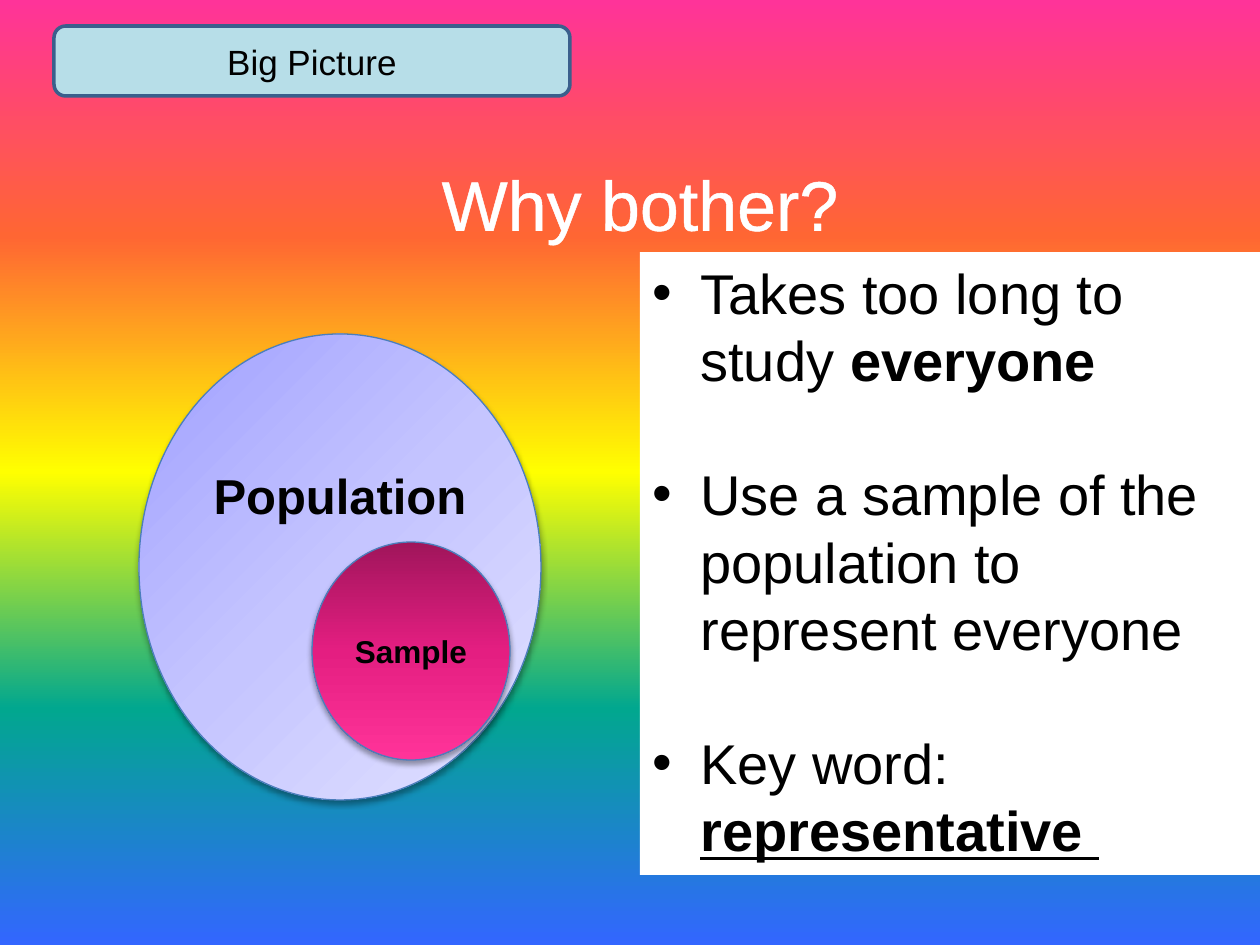
from lxml import etree
from pptx import Presentation
from pptx.dml.color import RGBColor
from pptx.enum.shapes import MSO_SHAPE
from pptx.enum.text import MSO_ANCHOR, PP_ALIGN
from pptx.oxml import parse_xml
from pptx.oxml.ns import nsdecls, qn
from pptx.util import Emu, Pt

ROUNDED, OVAL = MSO_SHAPE.ROUNDED_RECTANGLE, MSO_SHAPE.OVAL
MIDDLE, BOTTOM = MSO_ANCHOR.MIDDLE, MSO_ANCHOR.BOTTOM
CENTER = PP_ALIGN.CENTER
PX = 914400 / 126

THEME = {
    "font": "Arial",
    "ink": "000000",
    "paper": "FFFFFF",
    "tag_fill": "B7DEE8",
    "tag_line": "3A5F8C",
    "oval_line": "4B7EBC",
    "rainbow": ["FF3399", "FF6633", "FFFF00", "01A78F", "3366FF"],
    "lavender": ["A0A0FF", "C5C5FF", "E3E3FF"],
    "magenta": ["A0155B", "E41E81", "FF3399"],
    "tag_size": 20,
    "title_size": 40,
    "population_size": 28,
    "sample_size": 18,
    "reason_size": 32,
    "reason_pitch": 38.4,
}


def paint_gradient(fill, owner, colors, angle):
    fill.gradient()
    fill.gradient_angle = 360 - angle
    stops = owner.find(".//" + qn("a:gsLst"))
    for stop in list(stops):
        stops.remove(stop)
    for i, color in enumerate(colors):
        position = i * 100000 // (len(colors) - 1)
        stop = etree.SubElement(stops, qn("a:gs"), pos=str(position))
        etree.SubElement(stop, qn("a:srgbClr"), val=color)


def write(paragraph, text, size, color="ink", **formats):
    run = paragraph.add_run()
    run.text = text
    run.font.color.rgb = RGBColor.from_string(THEME[color])
    formats = {"name": THEME["font"], "size": Pt(THEME[size]), **formats}
    for key, value in formats.items():
        setattr(run.font, key, value)
    return run


prs = Presentation()
prs.slide_width, prs.slide_height = Emu(int(1260 * PX)), Emu(int(945 * PX))
slide = prs.slides.add_slide(prs.slide_layouts[6])
paint_gradient(slide.background.fill, slide.element, THEME["rainbow"], 90)

box = [Emu(int(v * PX)) for v in (54, 26, 516, 70)]
tag = slide.shapes.add_shape(ROUNDED, *box)
tag.shadow.inherit = False
tag.fill.solid()
tag.fill.fore_color.rgb = RGBColor.from_string(THEME["tag_fill"])
tag.line.color.rgb = RGBColor.from_string(THEME["tag_line"])
tag.line.width = Pt(2)
tag.text_frame.vertical_anchor = MIDDLE
tag_label = tag.text_frame.paragraphs[0]
tag_label.alignment = CENTER
write(tag_label, "Big Picture", "tag_size")

box = [Emu(int(v * PX)) for v in (223, 154, 834, 97)]
title = slide.shapes.add_textbox(*box).text_frame
title.word_wrap = True
title.vertical_anchor = BOTTOM
title.paragraphs[0].alignment = CENTER
question = write(title.paragraphs[0], "Why bother?", "title_size", "paper")
question.font._element.insert(0, parse_xml(
    f'<a:ln {nsdecls("a")} w="{Pt(1.45)}"><a:solidFill>'
    f'<a:srgbClr val="{THEME["paper"]}"/></a:solidFill></a:ln>'))

GROUPS = [
    ("Population", (139, 334, 402, 466), "lavender", 45, "population_size", 151),
    ("Sample", (312, 542, 198, 218), "magenta", 90, "sample_size", 6),
]
for name, place, colors, angle, size, bottom_inset in GROUPS:
    oval = slide.shapes.add_shape(OVAL, *[Emu(int(v * PX)) for v in place])
    paint_gradient(oval.fill, oval.element.spPr, THEME[colors], angle)
    oval.line.color.rgb = RGBColor.from_string(THEME["oval_line"])
    oval.line.width = Pt(0.75)
    oval.shadow.inherit = False
    oval.element.spPr.find(qn("a:effectLst")).append(parse_xml(
        f'<a:outerShdw {nsdecls("a")} blurRad="{Pt(3.1)}" dist="{Pt(1.8)}" '
        f'dir="5400000" rotWithShape="0"><a:srgbClr val="{THEME["ink"]}">'
        '<a:alpha val="35000"/></a:srgbClr></a:outerShdw>'))
    frame = oval.text_frame
    frame.vertical_anchor = MIDDLE
    frame.margin_bottom = Emu(int(bottom_inset * PX))
    frame.paragraphs[0].alignment = CENTER
    write(frame.paragraphs[0], name, size, bold=True)

REASONS = [
    [("Takes too long to study ", {}), ("everyone", {"bold": True})],
    [("Use a sample of the population to represent everyone", {})],
    [("Key word: ", {}), ("representative ", {"bold": True, "underline": True})],
]
box = [Emu(int(v * PX)) for v in (640, 252, 620, 623)]
panel = slide.shapes.add_textbox(*box)
panel.fill.solid()
panel.fill.fore_color.rgb = RGBColor.from_string(THEME["paper"])
reasons = panel.text_frame
reasons.word_wrap = True
for i, pieces in enumerate(REASONS):
    reason = reasons.add_paragraph() if i else reasons.paragraphs[0]
    indent = int(48 * PX)
    properties = reason._p.get_or_add_pPr()
    properties.set("marL", str(indent))
    properties.set("indent", str(-indent))
    etree.SubElement(properties, qn("a:buFont"), typeface=THEME["font"])
    etree.SubElement(properties, qn("a:buChar"), char="•")
    reason.line_spacing = Pt(THEME["reason_pitch"])
    if i:
        reason.space_before = Pt(THEME["reason_pitch"])
    for text, formats in pieces:
        write(reason, text, "reason_size", **formats)

prs.save("out.pptx")
